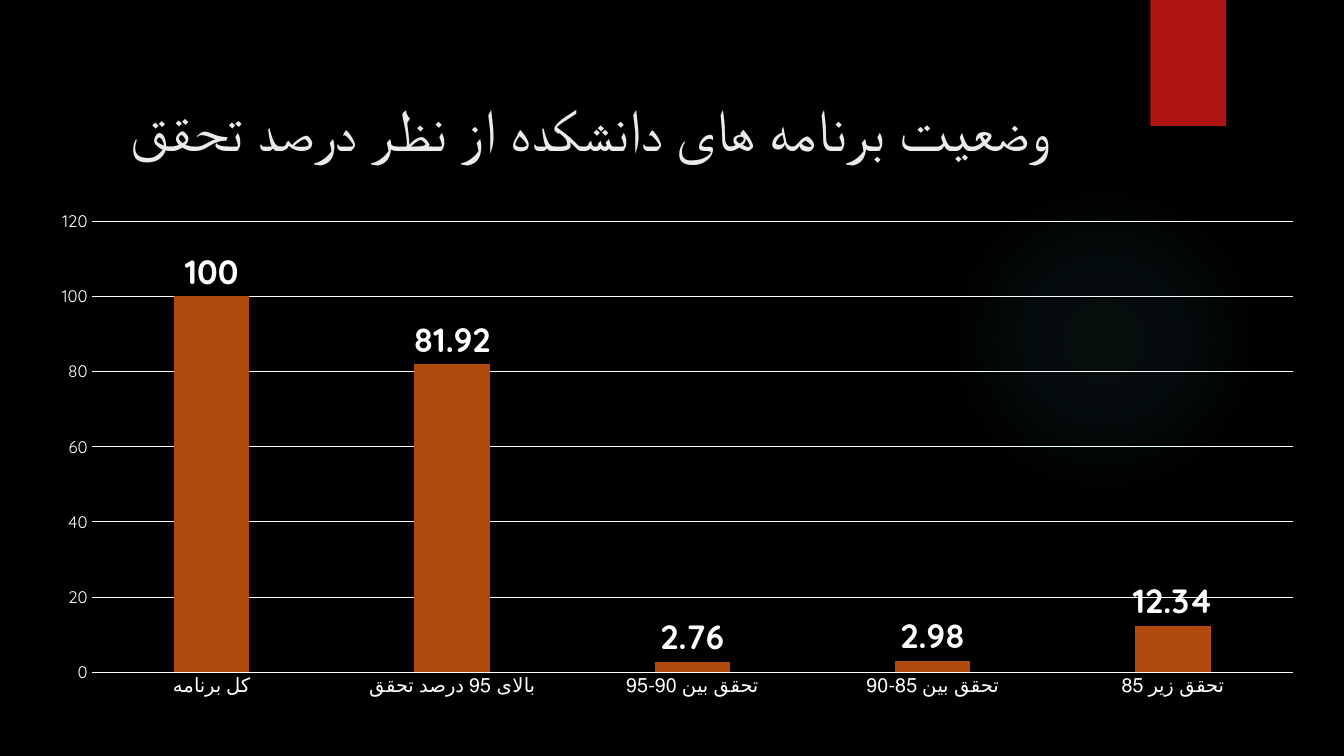
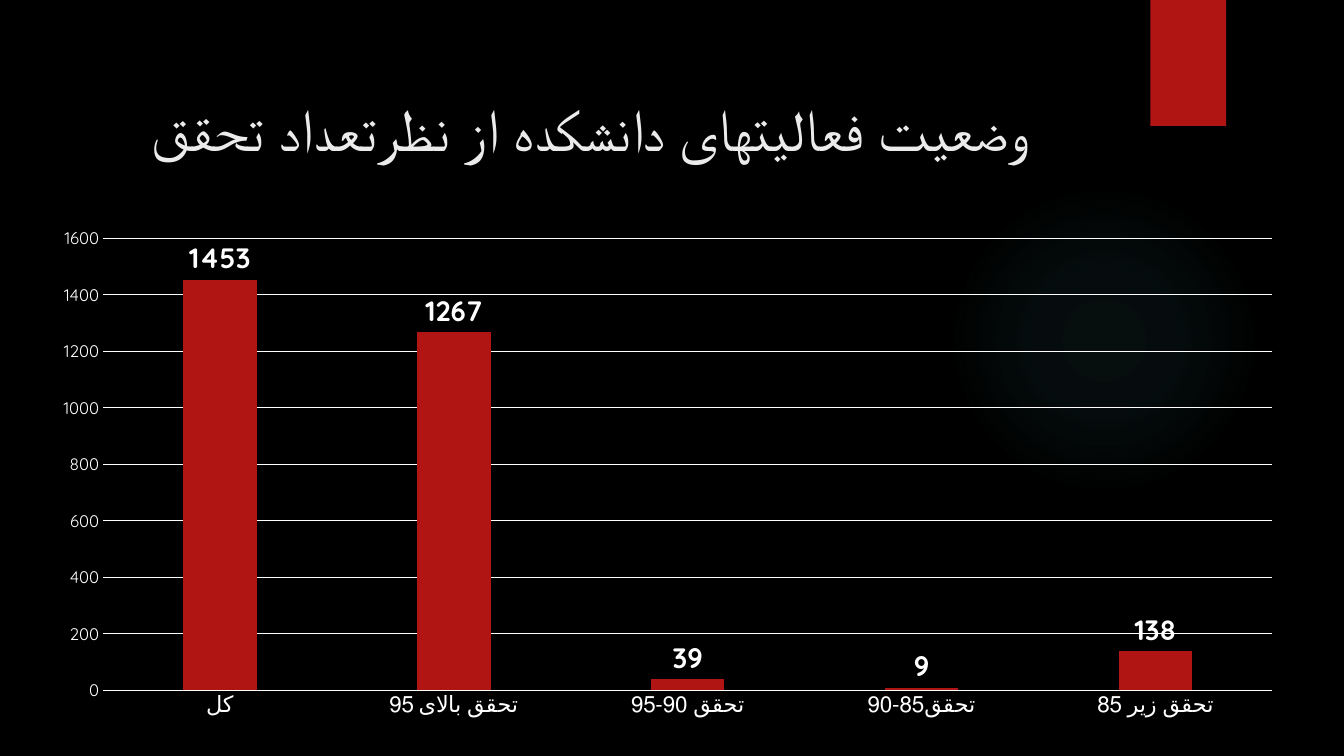
from lxml import etree
from pptx import Presentation
from pptx.chart.data import CategoryChartData
from pptx.dml.color import RGBColor
from pptx.enum.chart import XL_CHART_TYPE, XL_LABEL_POSITION, XL_TICK_MARK
from pptx.enum.shapes import MSO_SHAPE
from pptx.enum.text import MSO_ANCHOR, PP_ALIGN
from pptx.oxml.ns import qn
from pptx.util import Inches, Pt

COLUMNS = XL_CHART_TYPE.COLUMN_CLUSTERED
ABOVE_BAR = XL_LABEL_POSITION.OUTSIDE_END
NO_TICK = XL_TICK_MARK.NONE
OVAL, RECTANGLE = MSO_SHAPE.OVAL, MSO_SHAPE.RECTANGLE
MIDDLE, CENTER = MSO_ANCHOR.MIDDLE, PP_ALIGN.CENTER

FONT = "Quicksand"
COLORS = {
    "background": "000000",
    "title": "EBEBEB",
    "text": "FFFFFF",
    "red": "B01513",
    "orange": "B04A0D",
    "glow": "50B9C1",
}
GLOW_STOPS = [(0, 7), (36, 6), (69, 0)]
AXIS_FORMAT = {"major_tick_mark": NO_TICK, "minor_tick_mark": NO_TICK}
BAR_FORMAT = {"gap_width": 219, "overlap": -27, "vary_by_categories": False}
LABEL_FORMAT = {"show_value": True, "position": ABOVE_BAR}

REPORTS = [
    {
        "title": "وضعیت برنامه های دانشکده از نظر درصد تحقق",
        "area": (2.7, 26.53, 95.42, 66.93),
        "results": {
            "کل برنامه": 100,
            "بالای 95 درصد تحقق": 81.92,
            "تحقق بین 90-95": 2.76,
            "تحقق بین 85-90": 2.98,
            "تحقق زیر 85": 12.34,
        },
        "color": "orange",
        "scale": {"minimum_scale": 0, "maximum_scale": 120, "major_unit": 20},
        "category_size": 14,
        "label_size": 24,
    },
    {
        "title": "وضعیت فعالیتهای دانشکده از نظرتعداد تحقق",
        "area": (2.85, 28.8, 93.7, 67.33),
        "results": {
            "کل": 1453,
            "تحقق بالای 95": 1267,
            "تحقق 90-95": 39,
            "تحقق85-90": 9,
            "تحقق زیر 85": 138,
        },
        "color": "red",
        "scale": {"minimum_scale": 0, "maximum_scale": 1600, "major_unit": 200},
        "category_size": 16,
        "label_size": 20,
    },
]


def apply(target, values):
    """Set every attribute named in values on target."""
    for name, value in values.items():
        setattr(target, name, value)


def rgb(color):
    """Return the named palette colour."""
    return RGBColor.from_string(COLORS[color])


class Deck:
    """Hold the shared style and the current slide; areas are percent of its size."""

    def __init__(self):
        """Open an empty widescreen presentation."""
        self.presentation = Presentation()
        apply(self.presentation, {"slide_width": Inches(13.33), "slide_height": Inches(7.5)})
        self.slide = None

    def place(self, left, top, width, height):
        """Turn percent of the slide into lengths."""
        across, down = self.presentation.slide_width, self.presentation.slide_height
        shares = ((left, across), (top, down), (width, across), (height, down))
        return [round(share * full / 100) for share, full in shares]

    def start_slide(self):
        """Add a slide with its background, glow and ribbon."""
        self.slide = self.presentation.slides.add_slide(self.presentation.slide_layouts[6])
        backdrop = self.slide.background.fill
        backdrop.solid()
        backdrop.fore_color.rgb = rgb("background")
        self.glow((70.6, 24.4, 23.1, 41.07))
        self.ribbon((85.6, 0, 5.63, 16.67))

    def plain_shape(self, preset, area):
        """Add a shape without line, fill or shadow."""
        shape = self.slide.shapes.add_shape(preset, *self.place(*area))
        shape.shadow.inherit = False
        shape.line.fill.background()
        shape.fill.background()
        return shape

    def glow(self, area):
        """Add a circle that fades out from its centre."""
        circle = self.plain_shape(OVAL, area)
        gradient = etree.Element(qn("a:gradFill"), rotWithShape="1")
        stops = etree.SubElement(gradient, qn("a:gsLst"))
        for position, opacity in GLOW_STOPS:
            stop = etree.SubElement(stops, qn("a:gs"), pos=str(position * 1000))
            tint = etree.SubElement(stop, qn("a:srgbClr"), val=COLORS["glow"])
            etree.SubElement(tint, qn("a:alpha"), val=str(opacity * 1000))
        radial = etree.SubElement(gradient, qn("a:path"), {"path": "circle"})
        center = dict.fromkeys("ltrb", "50000")
        etree.SubElement(radial, qn("a:fillToRect"), center)
        properties = circle.element.spPr
        properties.replace(properties.find(qn("a:noFill")), gradient)

    def ribbon(self, area):
        """Add the red ribbon at the top edge."""
        fill = self.plain_shape(RECTANGLE, area).fill
        fill.solid()
        fill.fore_color.rgb = rgb("red")

    def write_font(self, font, size, color="text", bold=False):
        """Give a font the shared typeface."""
        apply(font, {"name": FONT, "size": Pt(size), "bold": bold})
        font.color.rgb = rgb(color)

    def title(self, wording):
        """Add the centred right-to-left title."""
        area = self.place(5.33, 6.67, 77.2, 20.4)
        frame = self.slide.shapes.add_textbox(*area).text_frame
        apply(frame, {"word_wrap": True, "vertical_anchor": MIDDLE})
        heading = frame.paragraphs[0]
        heading.alignment = CENTER
        heading._p.get_or_add_pPr().set("rtl", "1")
        run = heading.add_run()
        run.text = wording
        self.write_font(run.font, 42, "title")

    def rule(self, line):
        """Draw an axis or grid line in the text colour."""
        line.color.rgb = rgb("text")
        line.width = Pt(0.75)

    def column_chart(self, area, results, color, scale, category_size, label_size):
        """Add a column chart with labelled bars."""
        table = CategoryChartData()
        table.categories = list(results)
        table.add_series("Series 1", list(results.values()))
        chart = self.slide.shapes.add_chart(COLUMNS, *self.place(*area), table).chart
        apply(chart, {"has_legend": False, "has_title": False})
        self.write_font(chart.font, 10)

        categories, values = chart.category_axis, chart.value_axis
        for axis, size in ((categories, category_size), (values, 12)):
            apply(axis, AXIS_FORMAT)
            self.write_font(axis.tick_labels.font, size)
        self.rule(categories.format.line)
        apply(values, scale)
        values.format.line.fill.background()
        self.rule(values.major_gridlines.format.line)

        plot = chart.plots[0]
        apply(plot, BAR_FORMAT)
        bars = plot.series[0]
        bars.format.fill.solid()
        bars.format.fill.fore_color.rgb = rgb(color)
        apply(bars.data_labels, LABEL_FORMAT)
        self.write_font(bars.data_labels.font, label_size, bold=True)


def main():
    """Build one slide per report."""
    deck = Deck()
    for report in REPORTS:
        deck.start_slide()
        deck.title(report["title"])
        deck.column_chart(**{part: value for part, value in report.items() if part != "title"})
    deck.presentation.save("out.pptx")


if __name__ == "__main__":
    main()
